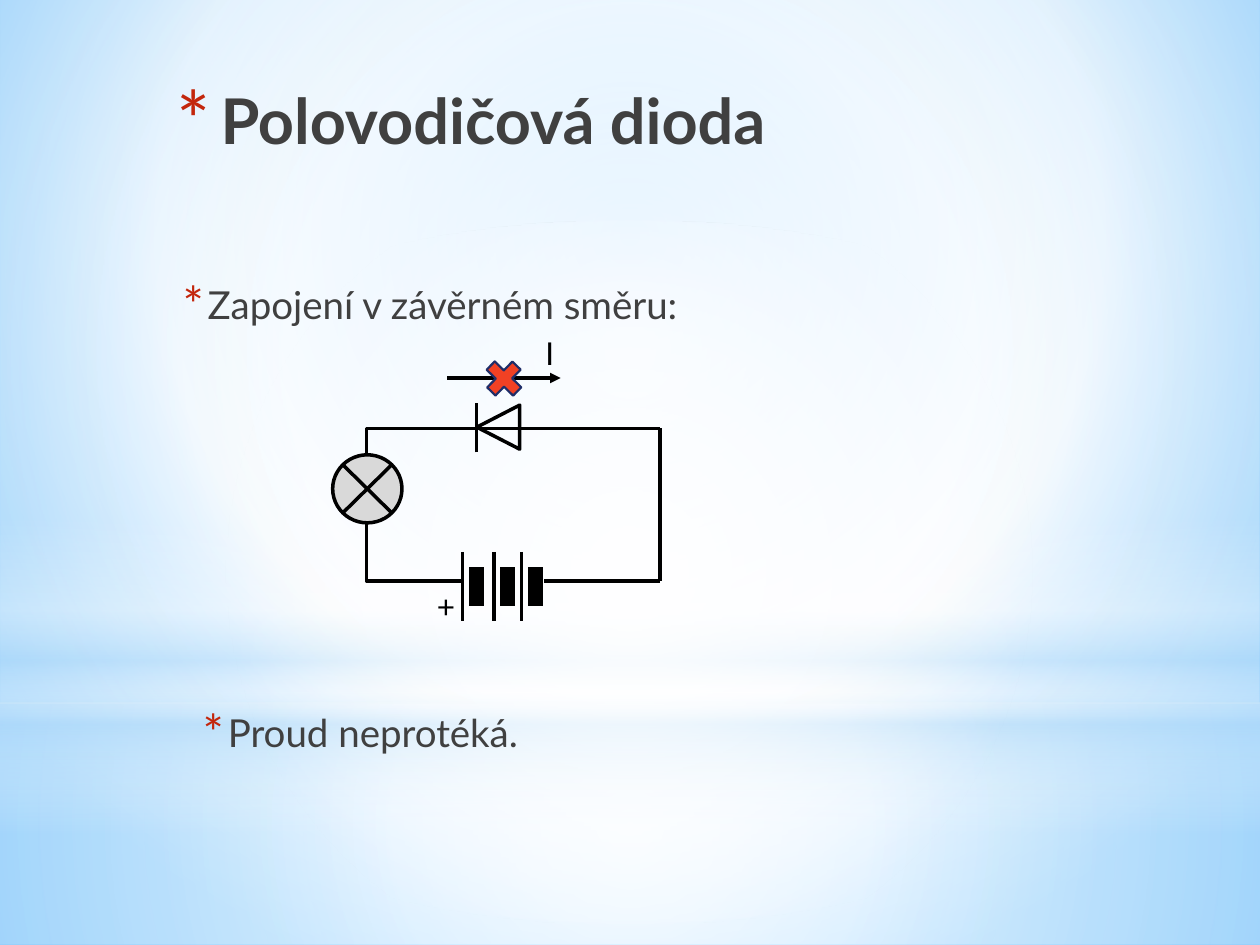
from lxml.etree import SubElement
from pptx import Presentation
from pptx.dml.color import RGBColor
from pptx.enum.shapes import MSO_CONNECTOR, MSO_SHAPE
from pptx.enum.text import MSO_ANCHOR, MSO_AUTO_SIZE, PP_ALIGN
from pptx.oxml.ns import qn
from pptx.util import Pt

PX = 9144  # 100 px to the inch
FONT = "Lato"
BLACK, GREY, RED, BLUE = "000000", "404040", "C3260C", "B4DCFA"
WHITE = "FFFFFF"
CENTRE = (50, 50, 50, 50)


def px(*lengths):
    return [round(length * PX) for length in lengths]


def color(hex_string):
    return RGBColor.from_string(hex_string)


def set_gradient(fill, properties, stops, focus=None):
    """Fill with (position, colour, opacity) stops, around a focus or downwards."""
    fill.solid()
    solid = properties.find(qn("a:solidFill"))
    gradient = SubElement(properties, qn("a:gradFill"), rotWithShape="1")
    properties.replace(solid, gradient)
    stop_list = SubElement(gradient, qn("a:gsLst"))
    for position, hex_string, opacity in stops:
        stop = SubElement(stop_list, qn("a:gs"), pos=str(position * 1000))
        tint = SubElement(stop, qn("a:srgbClr"), val=hex_string)
        if opacity < 100:
            SubElement(tint, qn("a:alpha"), val=str(opacity * 1000))
    if focus:
        circle = SubElement(gradient, qn("a:path"), path="circle")
        sides = {side: str(share * 1000) for side, share in zip("ltrb", focus)}
        SubElement(circle, qn("a:fillToRect"), **sides)
    else:
        SubElement(gradient, qn("a:lin"), ang="5400000", scaled="0")


def add_shape(shapes, kind, box, fill=None, line=None, width=2, rotation=0):
    shape = shapes.add_shape(kind, *px(*box))
    shape.shadow.inherit = False
    shape.rotation = rotation
    if fill:
        shape.fill.solid()
        shape.fill.fore_color.rgb = color(fill)
    else:
        shape.fill.background()
    if line:
        shape.line.color.rgb = color(line)
        shape.line.width = Pt(width)
    else:
        shape.line.fill.background()
    return shape


def add_wire(shapes, start, end, width=2, bent=False, arrow=False):
    """Draw a black line; a bent one runs level first and then upright."""
    kind = MSO_CONNECTOR.ELBOW if bent else MSO_CONNECTOR.STRAIGHT
    wire = shapes.add_connector(kind, *px(*start, *end))
    wire.line.color.rgb = color(BLACK)
    wire.line.width = Pt(width)
    properties = wire._element.spPr
    if bent:
        properties.find(qn("a:prstGeom")).set("prst", "bentConnector2")
    if arrow:
        SubElement(properties.find(qn("a:ln")), qn("a:tailEnd"), type="triangle")
    SubElement(properties, qn("a:effectLst"))


def add_label(shapes, box, text):
    label = shapes.add_textbox(*px(*box))
    frame = label.text_frame
    frame.word_wrap = True
    frame.auto_size = MSO_AUTO_SIZE.SHAPE_TO_FIT_TEXT
    frame.text = text
    font = frame.paragraphs[0].font
    font.name, font.size = FONT, Pt(18)
    font.color.rgb = color(BLACK)


def write_bullet(frame, text, size, margin, indent, bullet_size, bold=False):
    frame.word_wrap = True
    frame.auto_size = MSO_AUTO_SIZE.NONE
    frame.vertical_anchor = MSO_ANCHOR.TOP
    frame.text = text
    paragraph = frame.paragraphs[0]
    paragraph.alignment = PP_ALIGN.LEFT
    font = paragraph.font
    font.name, font.size, font.bold = FONT, Pt(size), bold
    font.color.rgb = color(GREY)
    properties = paragraph._p.get_or_add_pPr()
    properties.set("marL", str(margin * PX))
    properties.set("indent", str(-indent * PX))
    bullet_parts = [SubElement(properties, qn("a:buClr")),
                    SubElement(properties, qn("a:buSzPct"), val=str(bullet_size * 1000)),
                    SubElement(properties, qn("a:buFont"), typeface=FONT),
                    SubElement(properties, qn("a:buChar"), char="*")]
    SubElement(bullet_parts[0], qn("a:srgbClr"), val=RED)
    defaults = properties.find(qn("a:defRPr"))
    for part in bullet_parts:
        defaults.addprevious(part)
    return paragraph


def add_backdrop(slide):
    background = slide.background.fill
    background.solid()
    set_gradient(background, slide._element.find(".//" + qn("p:bgPr")),
                 [(0, "9ED5FF", 100), (60, WHITE, 100), (100, "5BB9FF", 100)],
                 (20, 10, 20, 60))
    layers = [
        (MSO_SHAPE.RECTANGLE, (0, 558, 1000, 192),
         [(0, WHITE, 91), (37, WHITE, 76), (100, BLUE, 79)], CENTRE),
        (MSO_SHAPE.RECTANGLE, (0, 0, 1000, 558),
         [(0, WHITE, 89), (48, WHITE, 62), (100, BLUE, 79)], CENTRE),
        (MSO_SHAPE.RECTANGLE, (0, 412, 1000, 250),
         [(0, WHITE, 0), (29, WHITE, 30), (45, BLUE, 40),
          (55, WHITE, 26), (65, BLUE, 60), (100, WHITE, 0)], None),
        (MSO_SHAPE.OVAL, (0, 175, 1000, 558),
         [(0, WHITE, 100), (56, WHITE, 0)], CENTRE),
    ]
    for kind, box, stops, focus in layers:
        shape = add_shape(slide.shapes, kind, box)
        set_gradient(shape.fill, shape._element.spPr, stops, focus)


def add_title(slide, box, text):
    title = slide.shapes.title
    title.left, title.top, title.width, title.height = px(*box)
    write_bullet(title.text_frame, text, 36, 35, 35, 128, bold=True)
    slide.shapes._spTree.append(title._element)  # in front of the backdrop


def add_statement(slide, box, text):
    statement = slide.shapes.add_textbox(*px(*box))
    paragraph = write_bullet(statement.text_frame, text, 22, 25, 20, 130)
    paragraph.space_before, paragraph.space_after = Pt(4.4), Pt(3)


def add_diode(shapes, left, top):
    add_shape(shapes, MSO_SHAPE.ISOSCELES_TRIANGLE, (left + 32, top + 2, 35, 34),
              line=BLACK, rotation=270)
    add_wire(shapes, (left + 99, top + 20), (left, top + 20))
    add_wire(shapes, (left + 32, top + 39), (left + 32, top))


def add_battery(shapes, left, top):
    for offset in (0, 25, 47):
        plate = left + offset
        add_wire(shapes, (plate + 11, top + 12), (plate + 11, top + 43), width=8.75)
        add_wire(shapes, (plate, top), (plate, top + 55))
    add_label(shapes, (left - 30, top + 23, 24, 40), "+")


def add_circuit(slide, left, top, width, height):
    """Place the loop of wires, with the lamp on its left side."""
    shapes = slide.shapes
    right, bottom = left + width, top + height
    diode_left, battery_left, wire_left = left + 55, left + 76, left + 141
    add_diode(shapes, diode_left, top - 20)
    add_battery(shapes, battery_left, bottom - 23)
    add_wire(shapes, (wire_left, top), (right, top))
    add_wire(shapes, (right, top), (right, bottom))
    add_wire(shapes, (wire_left, bottom), (right, bottom))
    add_shape(shapes, MSO_SHAPE.FLOWCHART_SUMMING_JUNCTION,
              (left - 27, top + 21, 55, 54), fill="D9D9D9", line=BLACK)
    add_wire(shapes, (diode_left, top), (left, top + 21), bent=True)
    add_wire(shapes, (battery_left, bottom), (left, top + 74), bent=True)


def add_blocked_current(slide, left, top):
    shapes = slide.shapes
    add_wire(shapes, (left, top + 40), (left + 90, top + 40), arrow=True)
    add_label(shapes, (left + 68, top, 27, 40), "I")
    add_shape(shapes, MSO_SHAPE.MATH_PLUS, (left + 25, top + 21, 40, 39),
              fill="F14124", line="1F2E69", width=1.25, rotation=44.3)


def main():
    presentation = Presentation()
    presentation.slide_width, presentation.slide_height = px(1000, 750)
    slide = presentation.slides.add_slide(presentation.slide_layouts[5])
    add_backdrop(slide)
    add_title(slide, (130, 60, 712, 125), "Polovodičová dioda")
    add_statement(slide, (130, 218, 732, 55), "Zapojení v závěrném směru:")
    add_circuit(slide, 291, 340, 233, 121)
    add_blocked_current(slide, 355, 260)
    add_statement(slide, (146, 558, 732, 55), "Proud neprotéká.")
    presentation.save("out.pptx")


if __name__ == "__main__":
    main()
